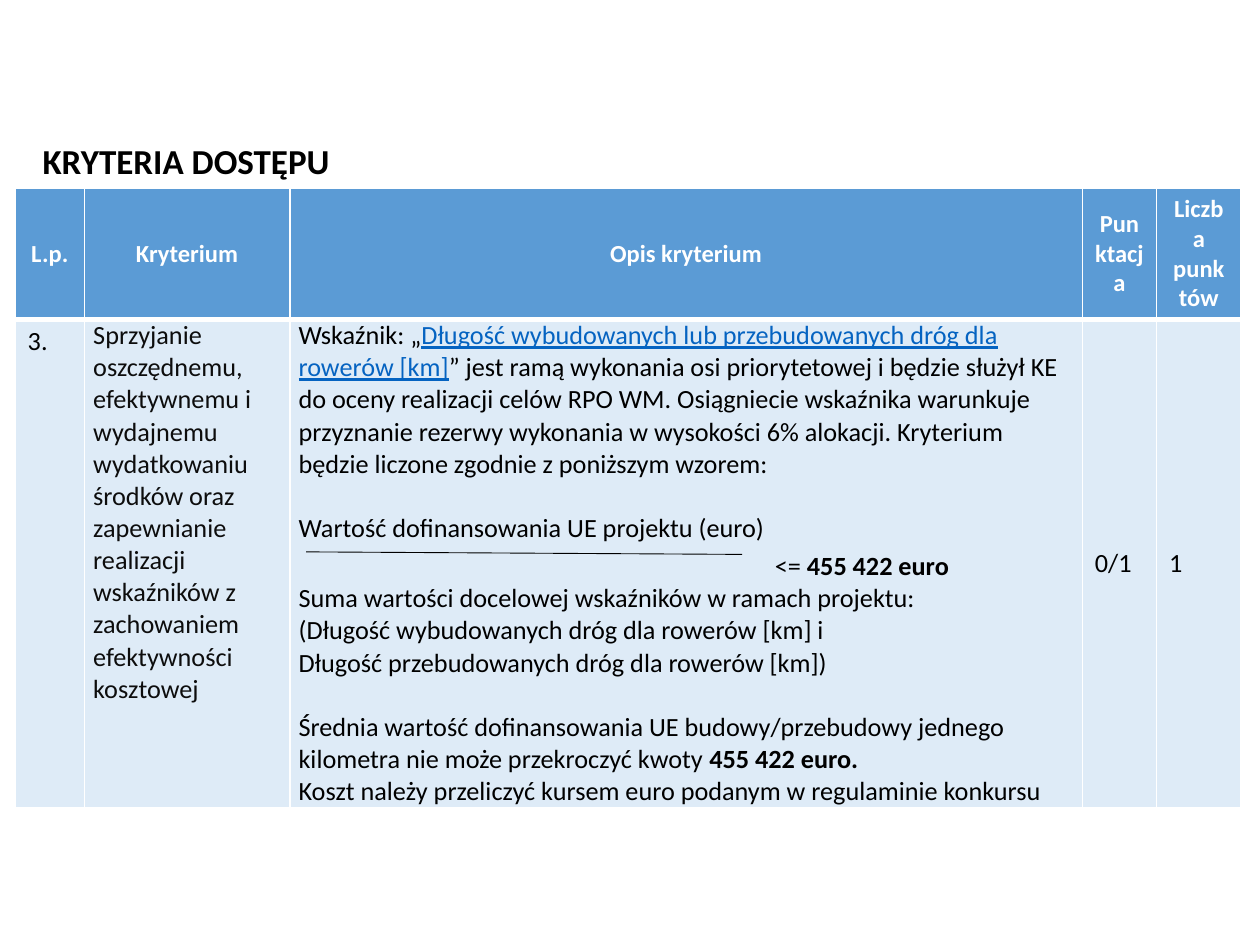
import lxml.etree
import pptx
import pptx.dml.color
import pptx.enum.shapes
import pptx.enum.text
import pptx.oxml.ns
import pptx.util

Inches = pptx.util.Inches
Pt = pptx.util.Pt
MIDDLE = pptx.enum.text.MSO_ANCHOR.MIDDLE
TOP = pptx.enum.text.MSO_ANCHOR.TOP
qn = pptx.oxml.ns.qn


def color(hex_string):
    return pptx.dml.color.RGBColor.from_string(hex_string)


def add_run(paragraph, text, size, text_color="000000", bold=False, underline=False):
    run = paragraph.add_run()
    run.text = text
    run.font.name = "Calibri"
    run.font.size = Pt(size)
    run.font.bold = bold
    run.font.underline = underline
    run.font.color.rgb = color(text_color)


presentation = pptx.Presentation()
presentation.slide_width = Inches(10)
presentation.slide_height = Inches(7.5)
slide = presentation.slides.add_slide(presentation.slide_layouts[6])

# Criteria table
headers = ["L.p.", "Kryterium", "Opis kryterium", "Punktacja", "Liczba punktów"]
column_widths = [0.55, 1.63, 6.29, 0.59, 0.67]
row_heights = [0.81, 3.21]
table_frame = slide.shapes.add_table(
    2, len(headers), Inches(0.12), Inches(1.49), Inches(9.74), Inches(4.83))
table = table_frame.table
for column, width in zip(table.columns, column_widths):
    column.width = Inches(width)
for row, height in zip(table.rows, row_heights):
    row.height = Inches(height)

# Each row: fill and its border widths in points
row_styles = [
    ("5B9BD5", {"lnL": 1, "lnR": 1, "lnT": 1, "lnB": 3}),
    ("DEEBF7", {"lnL": 1, "lnR": 1, "lnB": 1}),
]
for row, (fill_color, borders) in zip(table.rows, row_styles):
    for cell in row.cells:
        properties = cell._tc.get_or_add_tcPr()
        for side, width in borders.items():
            border = lxml.etree.SubElement(properties, qn("a:" + side), w=str(Pt(width)))
            border_fill = lxml.etree.SubElement(border, qn("a:solidFill"))
            lxml.etree.SubElement(border_fill, qn("a:srgbClr"), val="FFFFFF")
        cell.fill.solid()
        cell.fill.fore_color.rgb = color(fill_color)
        cell.vertical_anchor = MIDDLE

for column_index, header in enumerate(headers):
    paragraph = table.cell(0, column_index).text_frame.paragraphs[0]
    paragraph.alignment = pptx.enum.text.PP_ALIGN.CENTER
    add_run(paragraph, header, 14, "FFFFFF", bold=True)

criterion = ("Sprzyjanie oszczędnemu, efektywnemu i wydajnemu wydatkowaniu środków oraz "
             "zapewnianie realizacji wskaźników z zachowaniem efektywności kosztowej")
short_texts = {0: ("3.", "000000"), 1: (criterion, "0D0D0D"),
               3: ("0/1", "000000"), 4: ("1", "000000")}
for column_index, (text, text_color) in short_texts.items():
    paragraph = table.cell(1, column_index).text_frame.paragraphs[0]
    add_run(paragraph, text, 15, text_color)

for column_index in range(3):
    table.cell(1, column_index).vertical_anchor = TOP
for column_index in (1, 2):
    cell = table.cell(1, column_index)
    cell.margin_left = cell.margin_right = Inches(0.07)
    cell.margin_top = cell.margin_bottom = 0

# Description: space before in points, left indent in inches, runs with their formatting
plain = {}
bold = {"bold": True}
link = {"text_color": "0563C1", "underline": True}
description = [
    (0, 0, [
        ("Wskaźnik: „", plain),
        ("Długość wybudowanych lub przebudowanych dróg dla rowerów [km]", link),
        ("” jest ramą wykonania osi priorytetowej i będzie służył KE do oceny realizacji "
         "celów RPO WM. Osiągniecie wskaźnika warunkuje przyznanie rezerwy wykonania "
         "w wysokości 6% alokacji. Kryterium będzie liczone zgodnie z poniższym wzorem:", plain)]),
    (18.3, 0, [("Wartość dofinansowania UE projektu (euro)", plain)]),
    (3.5, 3.78, [("<= ", plain), ("455 422 euro", bold)]),
    (0, 0, [("Suma wartości docelowej wskaźników w ramach projektu:", plain)]),
    (0, 0, [("(Długość wybudowanych dróg dla rowerów [km] i", plain)]),
    (0, 0, [("Długość przebudowanych dróg dla rowerów [km])", plain)]),
    (18.3, 0, [
        ("Średnia wartość dofinansowania UE budowy/przebudowy jednego kilometra "
         "nie może przekroczyć kwoty ", plain),
        ("455 422 euro.", bold)]),
    (0, 0, [("Koszt należy przeliczyć kursem euro podanym w regulaminie konkursu", plain)]),
]
description_frame = table.cell(1, 2).text_frame
for index, (space_before, indent, runs) in enumerate(description):
    paragraph = description_frame.add_paragraph() if index else description_frame.paragraphs[0]
    if space_before:
        paragraph.space_before = Pt(space_before)
    if indent:
        paragraph._p.get_or_add_pPr().set("marL", str(Inches(indent)))
    for text, formatting in runs:
        add_run(paragraph, text, 15, **formatting)

# Heading
heading = slide.shapes.add_textbox(Inches(0.24), Inches(1.05), Inches(3.7), Inches(0.44))
heading.text_frame.word_wrap = True
heading.text_frame.auto_size = pptx.enum.text.MSO_AUTO_SIZE.SHAPE_TO_FIT_TEXT
heading.text_frame.vertical_anchor = MIDDLE
add_run(heading.text_frame.paragraphs[0], "KRYTERIA DOSTĘPU", 20, bold=True)

# Fraction bar of the formula
fraction_bar = slide.shapes.add_connector(
    pptx.enum.shapes.MSO_CONNECTOR.STRAIGHT,
    Inches(2.43), Inches(4.38), Inches(5.89), Inches(4.4))
fraction_bar.line.color.rgb = color("000000")
fraction_bar.line.width = Pt(0.5)
lxml.etree.SubElement(fraction_bar._element.spPr, qn("a:effectLst"))

presentation.save("out.pptx")
